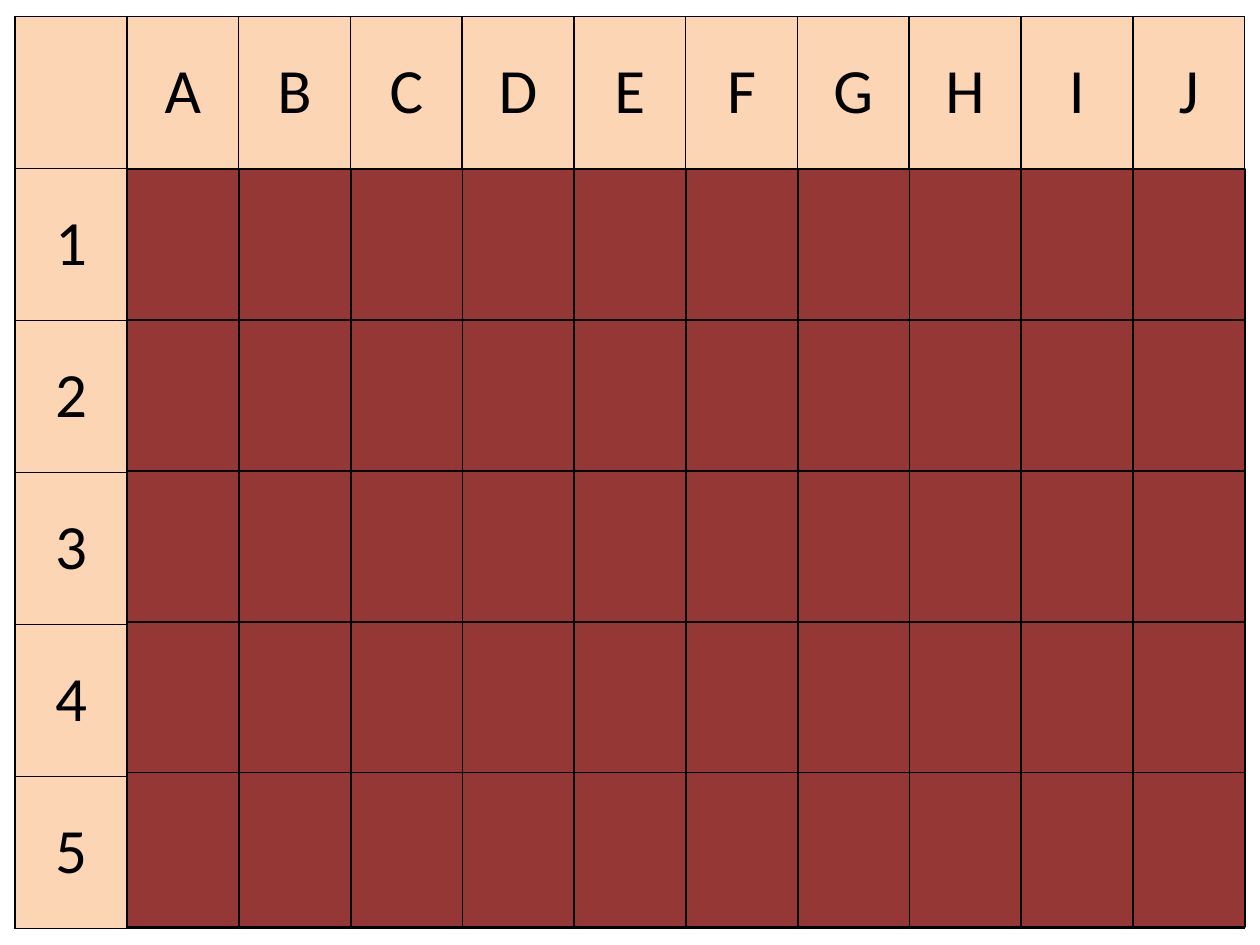
import collections

import lxml.etree
import pptx
import pptx.dml.color
import pptx.enum.shapes
import pptx.enum.text
import pptx.oxml.ns
import pptx.util

COLOURS = {"header": "FCD5B5", "tile": "953735", "line": "000000", "text": "000000"}
FONT = "Calibri"
LINE_WIDTH = pptx.util.Pt(1)
COLUMN_LABELS = "ABCDEFGHIJ"
ROW_LABELS = "12345"
TILE_PITCH = 0.199

Box = collections.namedtuple("Box", "left top width height")


def rgb(name):
    """Return the named palette colour."""
    return pptx.dml.color.RGBColor.from_string(COLOURS[name])


def write_text(cell, text, size=36, colour="text", align=pptx.enum.text.PP_ALIGN.CENTER):
    """Write one formatted line, vertically centred, in a cell."""
    cell.vertical_anchor = pptx.enum.text.MSO_ANCHOR.MIDDLE
    para = cell.text_frame.paragraphs[0]
    para.alignment = align
    span = para.add_run()
    span.text = text
    span.font.name = FONT
    span.font.size = pptx.util.Pt(size)
    span.font.color.rgb = rgb(colour)


def draw_borders(cell):
    """Draw a thin line on all four sides of a cell."""
    properties = cell._tc.get_or_add_tcPr()
    for index, side in enumerate(("lnL", "lnR", "lnT", "lnB")):
        line = lxml.etree.Element(pptx.oxml.ns.qn(f"a:{side}"), w=str(LINE_WIDTH))
        fill = lxml.etree.SubElement(line, pptx.oxml.ns.qn("a:solidFill"))
        lxml.etree.SubElement(fill, pptx.oxml.ns.qn("a:srgbClr"), val=COLOURS["line"])
        properties.insert(index, line)


def add_label_table(page, box):
    """Add the table whose first row and column carry the labels."""
    row_count, column_count = len(ROW_LABELS) + 1, len(COLUMN_LABELS) + 1
    table = page.shapes.add_table(row_count, column_count, *box).table
    table.first_row = False
    table.horz_banding = False
    for column in table.columns:
        column.width = box.width // column_count
    for row in table.rows:
        row.height = box.height // row_count
    for row in range(row_count):
        for column in range(column_count):
            cell = table.cell(row, column)
            if row == 0 or column == 0:
                cell.fill.solid()
                cell.fill.fore_color.rgb = rgb("header")
            else:
                cell.fill.background()
            draw_borders(cell)
    for column, label in enumerate(COLUMN_LABELS, 1):
        write_text(table.cell(0, column), label)
    for row, label in enumerate(ROW_LABELS, 1):
        write_text(table.cell(row, 0), label)


def add_tile(page, box):
    """Add one cover tile."""
    tile = page.shapes.add_shape(pptx.enum.shapes.MSO_SHAPE.RECTANGLE, *box)
    tile.shadow.inherit = False
    tile.fill.solid()
    tile.fill.fore_color.rgb = rgb("tile")
    tile.line.color.rgb = rgb("line")
    tile.line.width = LINE_WIDTH


def add_tile_board(page, box):
    """Cover the box with tiles, the last row reaching its bottom edge."""
    width = box.width / len(COLUMN_LABELS)
    tops = [box.top + int(row * TILE_PITCH * box.height) for row in range(len(ROW_LABELS))]
    bottoms = tops[1:] + [box.top + box.height]
    for column in range(len(COLUMN_LABELS)):
        for top, bottom in zip(tops, bottoms):
            left = box.left + int(column * width)
            add_tile(page, Box(left, top, int(width), bottom - top))


def main():
    """Build the slide and save it."""
    deck = pptx.Presentation()
    deck.slide_width = pptx.util.Inches(10)
    deck.slide_height = pptx.util.Inches(7.5)
    page = deck.slides.add_slide(deck.slide_layouts[6])
    add_label_table(page, Box(*map(pptx.util.Inches, (0.12, 0.13, 9.76, 7.24))))
    add_tile_board(page, Box(*map(pptx.util.Inches, (1.01, 1.34, 8.87, 6.02))))
    deck.save("out.pptx")


if __name__ == "__main__":
    main()
